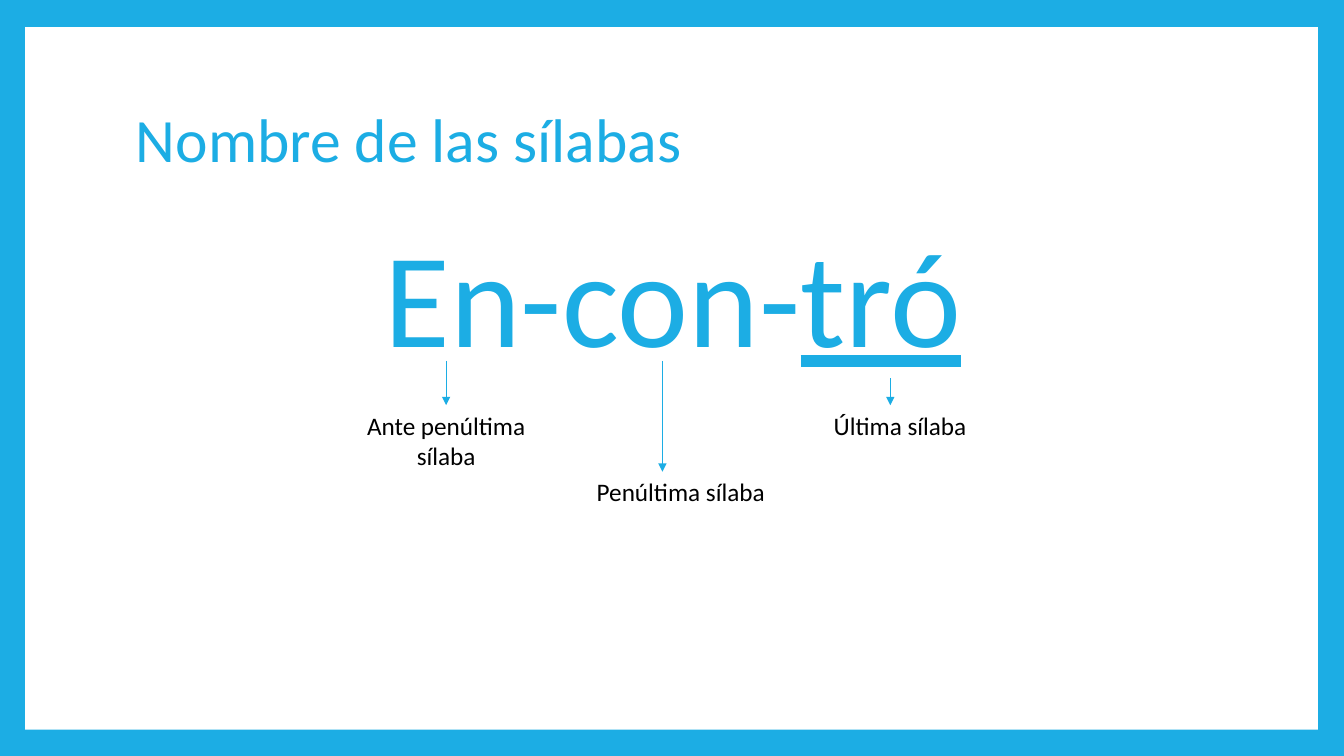
from lxml import etree
from pptx import Presentation
from pptx.dml.color import RGBColor
from pptx.enum import shapes, text
from pptx.oxml import ns
from pptx.util import Inches, Pt

BLUE = RGBColor(0x1C, 0xAD, 0xE4)
WHITE = RGBColor(0xFF, 0xFF, 0xFF)
BLACK = RGBColor(0x00, 0x00, 0x00)


def add_text(slide, box, runs, size, color, align=text.PP_ALIGN.LEFT, wrap=True):
    """Add a one-paragraph text box; runs are (wording, underlined) pairs."""
    shape = slide.shapes.add_textbox(*(Inches(length) for length in box))
    shape.text_frame.word_wrap = wrap
    paragraph = shape.text_frame.paragraphs[0]
    paragraph.alignment = align
    for wording, underlined in runs:
        run = paragraph.add_run()
        run.text = wording
        run.font.name = "Calibri"
        run.font.size = Pt(size)
        run.font.color.rgb = color
        if underlined:
            run.font.underline = True
    return shape


presentation = Presentation()
presentation.slide_width = Inches(13.33)
presentation.slide_height = Inches(7.5)
slide = presentation.slides.add_slide(presentation.slide_layouts[6])

# Blue frame around a white panel
slide.background.fill.solid()
slide.background.fill.fore_color.rgb = BLUE
panel = slide.shapes.add_shape(
    shapes.MSO_SHAPE.RECTANGLE, Inches(0.25), Inches(0.27), Inches(12.82), Inches(6.97))
panel.shadow.inherit = False
panel.fill.solid()
panel.fill.fore_color.rgb = WHITE
panel.line.fill.background()

# Title
title = add_text(slide, (1.25, 0.67, 10.8, 1.48), [("Nombre de las sílabas", False)], 44, BLUE)
title.text_frame.vertical_anchor = text.MSO_ANCHOR.MIDDLE
title.text_frame.paragraphs[0].line_spacing = 0.9

# Word split into syllables, the stressed one underlined
word = add_text(slide, (1.25, 2.25, 10.8, 4.42), [("En-con-", False), ("tró", True)],
                96, BLUE, text.PP_ALIGN.CENTER)
word_paragraph = word.text_frame.paragraphs[0]
word_paragraph.line_spacing = 0.9
word_paragraph.space_before = Pt(14)
word_paragraph._p.get_or_add_pPr().set("marL", str(Inches(0.05)))

# Syllable names, each with its arrow: wording, box, align, wrap, arrow x, arrow top, joined
syllables = [
    ("Última sílaba", (8.17, 4.02, 1.69, 0.4), text.PP_ALIGN.LEFT, True, 8.83, 3.75, False),
    ("Penúltima sílaba", (5.82, 4.68, 1.91, 0.4), text.PP_ALIGN.LEFT, False, 6.57, 3.58, False),
    ("Ante penúltima sílaba", (3.32, 4.02, 2.21, 0.71), text.PP_ALIGN.CENTER, True,
     4.43, 3.58, True),
]
for wording, box, align, wrap, x, top, joined in syllables:
    label = add_text(slide, box, [(wording, False)], 18, BLACK, align, wrap)
    label.text_frame.auto_size = text.MSO_AUTO_SIZE.SHAPE_TO_FIT_TEXT
    arrow = slide.shapes.add_connector(
        shapes.MSO_CONNECTOR.STRAIGHT, Inches(x), Inches(top), Inches(x), Inches(box[1]))
    if joined:
        arrow.end_connect(label, 0)
        arrow.begin_x = arrow.end_x
    arrow.line.color.rgb = BLUE
    arrow.line.width = Pt(0.79)
    etree.SubElement(arrow.line._get_or_add_ln(), ns.qn("a:tailEnd"), type="triangle")
    etree.SubElement(arrow._element.spPr, ns.qn("a:effectLst"))

presentation.save("out.pptx")
